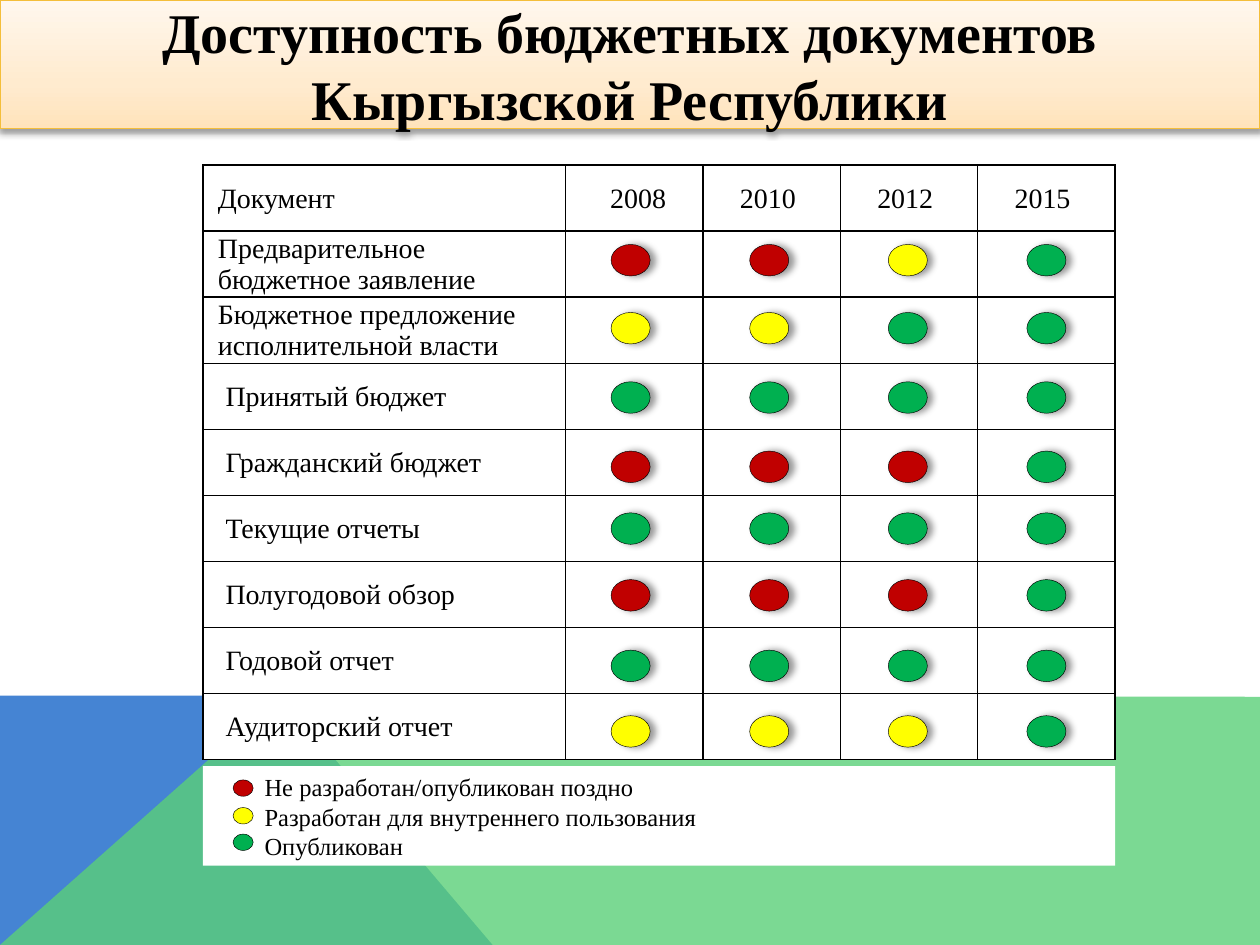
from dataclasses import dataclass

from lxml import etree
from pptx import Presentation
from pptx.dml.color import RGBColor
from pptx.enum.shapes import MSO_SHAPE
from pptx.enum.text import MSO_ANCHOR, MSO_AUTO_SIZE, PP_ALIGN
from pptx.oxml.ns import qn
from pptx.util import Inches, Pt

OVAL, RECTANGLE = MSO_SHAPE.OVAL, MSO_SHAPE.RECTANGLE
MIDDLE, TOP = MSO_ANCHOR.MIDDLE, MSO_ANCHOR.TOP
LEFT, CENTER = PP_ALIGN.LEFT, PP_ALIGN.CENTER
NO_AUTOFIT = MSO_AUTO_SIZE.NONE
TITLE_ONLY_LAYOUT = 5

FONT = "Times New Roman"
COLORS = {
    "black": "000000",
    "white": "FFFFFF",
    "blue": "4584D3",
    "mint": "5BD078",
    "gold": "F4BE3A",
    "red": "C00000",
    "yellow": "FFFF00",
    "green": "00B050",
}
TITLE_GRADIENT = ((0, "FFE3BB"), (35, "FFEBCF"), (100, "FFF7ED"))
STATUS_COLORS = {"R": "red", "Y": "yellow", "G": "green"}


@dataclass
class Document:
    name: str
    statuses: str
    dot_top: float
    indent: float = 0.18


@dataclass
class LegendEntry:
    status: str
    label: str
    dot_top: float


@dataclass
class Shadow:
    opacity: int
    blur: float
    distance: float
    angle: int


YEARS = ("2008", "2010", "2012", "2015")
DOCUMENTS = (
    Document("Предварительное бюджетное заявление", "RRYG", 1.94, 0.12),
    Document("Бюджетное предложение исполнительной власти", "YYGG", 2.48, 0.12),
    Document("Принятый бюджет", "GGGG", 3.03),
    Document("Гражданский бюджет", "RRRG", 3.58),
    Document("Текущие отчеты", "GGGG", 4.07),
    Document("Полугодовой обзор", "RRRG", 4.6),
    Document("Годовой отчет", "GGGG", 5.16),
    Document("Аудиторский отчет", "YYYG", 5.68),
)
LEGEND = (
    LegendEntry("R", "Не разработан/опубликован поздно", 6.19),
    LegendEntry("Y", "Разработан для внутреннего пользования", 6.41),
    LegendEntry("G", "Опубликован", 6.62),
)
TITLE_SHADOW = Shadow(38, 3.1, 1.6, 90)
DOT_SHADOW = Shadow(40, 4, 3, 0)

TABLE_LEFT, TABLE_TOP, TABLE_WIDTH = 1.61, 1.31, 7.24
TABLE_HEIGHT = 4.72
NAME_WIDTH, YEAR_WIDTH = 2.88, 1.09
DOT_LEFT, DOT_STEP = 4.85, 1.1


def color(name: str) -> RGBColor:
    return RGBColor.from_string(COLORS[name])


def paint(shape, fill: str) -> None:
    shape.fill.solid()
    shape.fill.fore_color.rgb = color(fill)


def add_color(parent, hex_value: str):
    return etree.SubElement(parent, qn("a:srgbClr"), val=hex_value)


def set_opacity(color_element, percent: int) -> None:
    etree.SubElement(color_element, qn("a:alpha"), val=str(percent * 1000))


def add_shadow(shape, shadow: Shadow) -> None:
    shape.shadow.inherit = False
    effects = shape._element.spPr.find(qn("a:effectLst"))
    outer = etree.SubElement(
        effects, qn("a:outerShdw"), blurRad=str(Pt(shadow.blur)),
        dist=str(Pt(shadow.distance)), dir=str(shadow.angle * 60000),
        algn="ctr", rotWithShape="0")
    set_opacity(add_color(outer, COLORS["black"]), shadow.opacity)


def write(paragraph, text: str, size: float, bold: bool = False, align=LEFT) -> None:
    paragraph.alignment = align
    run = paragraph.add_run()
    run.text = text
    run.font.name = FONT
    run.font.size = Pt(size)
    run.font.bold = bold
    run.font.color.rgb = color("black")


def add_background(slide, points: tuple, fill: str, opacity: int = 100) -> None:
    corners = [(Inches(x), Inches(y)) for x, y in points]
    builder = slide.shapes.build_freeform(*corners[0])
    builder.add_line_segments(corners[1:], close=True)
    shape = builder.convert_to_shape()
    paint(shape, fill)
    shape.line.fill.background()
    shape.shadow.inherit = False
    if opacity < 100:
        set_opacity(shape._element.spPr.find(".//" + qn("a:srgbClr")), opacity)


def format_title(title) -> None:
    title.left, title.top = Inches(0), Inches(0)
    title.width, title.height = Inches(10), Inches(1.02)
    title.fill.gradient()
    title.fill.gradient_angle = 90
    stops = title._element.spPr.find(".//" + qn("a:gsLst"))
    for stop in list(stops):
        stops.remove(stop)
    for position, hex_value in TITLE_GRADIENT:
        stop = etree.SubElement(stops, qn("a:gs"), pos=str(position * 1000))
        add_color(stop, hex_value)
    title.line.color.rgb = color("gold")
    title.line.width = Pt(0.75)
    add_shadow(title, TITLE_SHADOW)
    frame = title.text_frame
    frame.auto_size = NO_AUTOFIT
    frame.word_wrap = True
    frame.vertical_anchor = MIDDLE
    write(frame.paragraphs[0], "Доступность бюджетных документов Кыргызской Республики",
          32, True, CENTER)


def style_cell(cell, left: float = 0.01, right: float = 0.01) -> None:
    """Set white fill, black borders and margins; lengths in inches."""
    cell.vertical_anchor = MIDDLE
    cell.margin_left, cell.margin_right = Inches(left), Inches(right)
    cell.margin_top, cell.margin_bottom = Inches(0.01), Inches(0)
    properties = cell._tc.get_or_add_tcPr()
    for side in ("lnL", "lnR", "lnT", "lnB"):
        line = etree.SubElement(properties, qn(f"a:{side}"), w=str(Pt(1)))
        add_color(etree.SubElement(line, qn("a:solidFill")), COLORS["black"])
    paint(cell, "white")


def add_document_table(slide) -> None:
    row_count = len(DOCUMENTS) + 1
    table = slide.shapes.add_table(
        row_count, len(YEARS) + 1, Inches(TABLE_LEFT), Inches(TABLE_TOP),
        Inches(TABLE_WIDTH), Inches(TABLE_HEIGHT)).table
    table.first_row = table.horz_banding = False
    for index, column in enumerate(table.columns):
        column.width = Inches(YEAR_WIDTH if index else NAME_WIDTH)
    for row in table.rows:
        row.height = Inches(TABLE_HEIGHT / row_count)

    names = [("Документ", 0.12)] + [(item.name, item.indent) for item in DOCUMENTS]
    for row, (name, indent) in enumerate(names):
        style_cell(table.cell(row, 0), left=indent)
        write(table.cell(row, 0).text_frame.paragraphs[0], name, 16)
        for column, year in enumerate(YEARS, start=1):
            cell = table.cell(row, column)
            if row:
                style_cell(cell)
            else:
                margins = {"left" if column == 1 else "right": 0.07}
                style_cell(cell, **margins)
                write(cell.text_frame.paragraphs[0], year, 16, align=CENTER)


def add_dot(slide, status: str, left: float, top: float, width: float, height: float):
    dot = slide.shapes.add_shape(OVAL, Inches(left), Inches(top), Inches(width), Inches(height))
    paint(dot, STATUS_COLORS[status])
    dot.line.color.rgb = color("black")
    dot.line.width = Pt(0.25)
    dot.shadow.inherit = False
    return dot


def add_legend(slide) -> None:
    box = slide.shapes.add_shape(
        RECTANGLE, Inches(TABLE_LEFT), Inches(6.08), Inches(TABLE_WIDTH), Inches(0.79))
    paint(box, "white")
    box.line.fill.background()
    box.shadow.inherit = False
    frame = box.text_frame
    frame.word_wrap = True
    frame.vertical_anchor = TOP
    frame.margin_left = Inches(0.49)
    for index, entry in enumerate(LEGEND):
        paragraph = frame.add_paragraph() if index else frame.paragraphs[0]
        write(paragraph, entry.label, 14)
        add_dot(slide, entry.status, 1.85, entry.dot_top, 0.16, 0.13)


def main() -> None:
    presentation = Presentation()
    presentation.slide_width, presentation.slide_height = Inches(10), Inches(7.5)
    slide = presentation.slides.add_slide(presentation.slide_layouts[TITLE_ONLY_LAYOUT])
    add_background(slide, ((0, 7.5), (0, 5.52), (2.23, 5.52), (3.91, 7.5)), "blue")
    add_background(slide, ((0, 7.5), (2.23, 5.52), (10, 5.53), (10, 7.5)), "mint", 80)
    format_title(slide.shapes.title)
    add_document_table(slide)
    add_legend(slide)
    for document in DOCUMENTS:
        for column, status in enumerate(document.statuses):
            left = DOT_LEFT + column * DOT_STEP
            add_shadow(add_dot(slide, status, left, document.dot_top, 0.31, 0.25), DOT_SHADOW)
    presentation.save("out.pptx")


if __name__ == "__main__":
    main()
